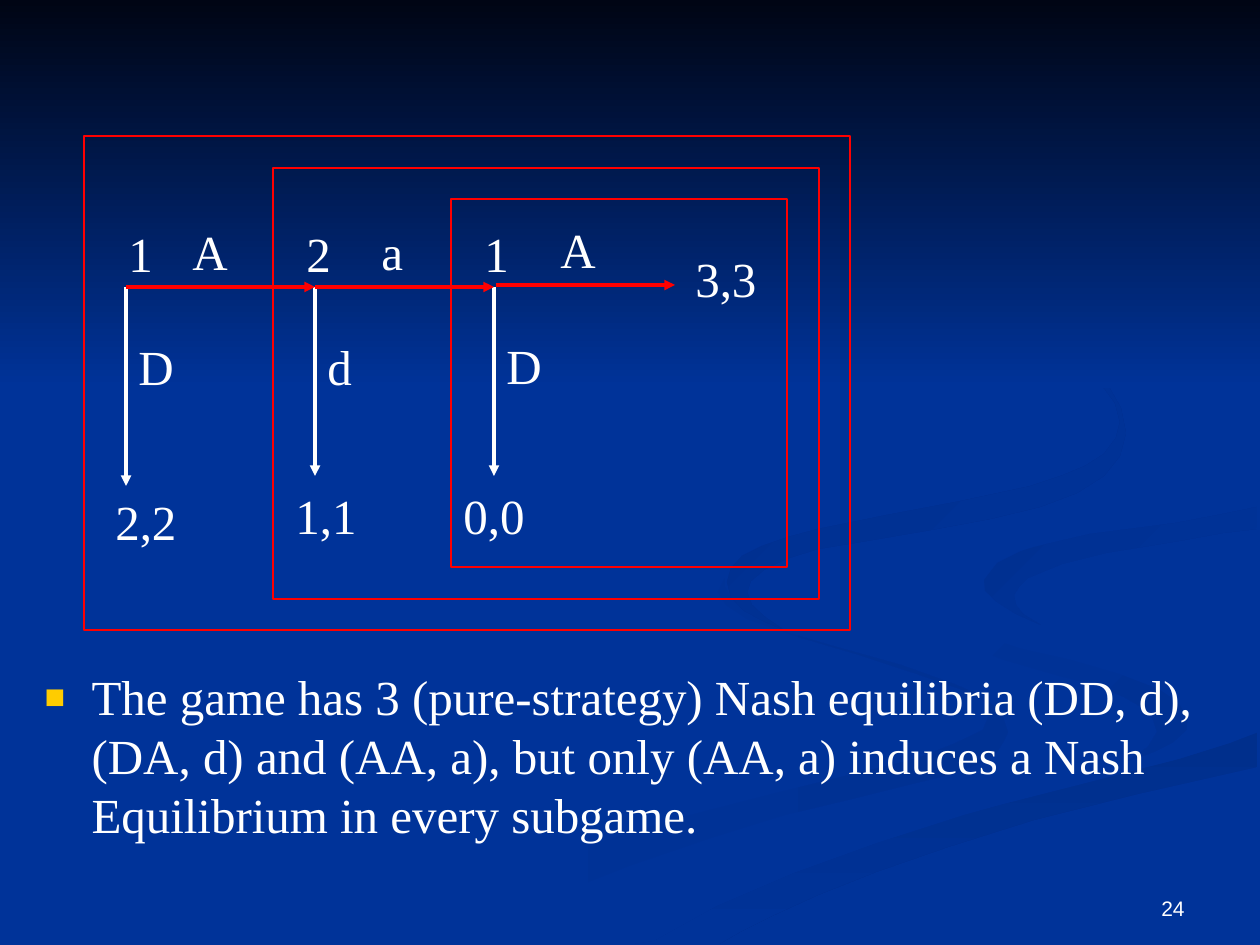
import dataclasses

import lxml.etree
import pptx
import pptx.dml.color
import pptx.enum.shapes
import pptx.enum.text
import pptx.oxml.ns
import pptx.util

UNIT = 914400 / 126  # EMU in one px


def px(num):
    return pptx.util.Emu(round(num * UNIT))


def rgb(code):
    return pptx.dml.color.RGBColor.from_string(code)


def put(target, values):
    for name, value in values.items():
        setattr(target, name, value)


def add(parent, tag, **attrs):
    return lxml.etree.SubElement(parent, pptx.oxml.ns.qn(tag), attrs)


@dataclasses.dataclass(frozen=True)
class Theme:
    back: str = "003399"
    night: str = "000514"
    text: str = "FFFFFF"
    path_red: str = "FF0000"
    mark: str = "FFCC00"
    serif: str = "Times New Roman"
    sans: str = "Arial"
    main: int = 28
    small: int = 12


class Deck:
    def __init__(self, theme):
        self.theme = theme
        self.show = pptx.Presentation()
        put(self.show, {"slide_width": px(1260), "slide_height": px(945)})
        self.slide = self.show.slides.add_slide(self.show.slide_layouts[1])
        self.shapes = self.slide.shapes
        title = self.shapes.title._element
        title.getparent().remove(title)
        fill = self.slide.background.fill
        fill.solid()
        fill.fore_color.rgb = rgb(theme.back)

    def place(self, shape, left, top, width, height):
        put(shape, {"left": px(left), "top": px(top),
                    "width": px(width), "height": px(height)})

    def style(self, para, face, size):
        put(para.font, {"name": face, "size": pptx.util.Pt(size)})
        para.font.color.rgb = rgb(self.theme.text)

    def band(self, points, first, last, angle):
        """Draw a filled outline; angle runs clockwise."""
        form = self.shapes.build_freeform(*points[0], scale=UNIT)
        form.add_line_segments(points[1:], close=True)
        shape = form.convert_to_shape()
        shape.shadow.inherit = False
        shape.line.fill.background()
        if first == last:
            shape.fill.solid()
            shape.fill.fore_color.rgb = rgb(first)
            return
        shape.fill.gradient()
        shape.fill.gradient_angle = (360 - angle) % 360
        for stop, color in zip(shape.fill.gradient_stops, (first, last)):
            stop.color.rgb = rgb(color)

    def body(self, text, box, drop):
        shape = self.slide.placeholders[1]
        self.shapes._spTree.append(shape._element)  # bring to front
        self.place(shape, *box)
        frame = shape.text_frame
        put(frame, {"text": text, "margin_top": px(drop), "word_wrap": True,
                    "auto_size": pptx.enum.text.MSO_AUTO_SIZE.NONE})
        para = frame.paragraphs[0]
        para.space_before = pptx.util.Pt(0)
        props = para._p.get_or_add_pPr()
        props.set("marL", str(px(47)))
        props.set("indent", str(px(-47)))
        add(add(props, "a:buClr"), "a:srgbClr", val=self.theme.mark)
        add(props, "a:buSzPct", val="70000")
        add(props, "a:buFont", typeface=self.theme.sans)
        add(props, "a:buChar", char="■")
        self.style(para, self.theme.serif, self.theme.main)

    def label(self, text, left, top, width):
        shape = self.shapes.add_textbox(*map(px, (left, top, width, 72)))
        put(shape.text_frame, {
            "text": text, "word_wrap": False,
            "auto_size": pptx.enum.text.MSO_AUTO_SIZE.SHAPE_TO_FIT_TEXT})
        self.style(shape.text_frame.paragraphs[0],
                   self.theme.serif, self.theme.main)

    def number(self, text, box):
        frame = self.shapes.add_textbox(*map(px, box)).text_frame
        put(frame, {"text": text, "word_wrap": True,
                    "vertical_anchor": pptx.enum.text.MSO_ANCHOR.BOTTOM})
        para = frame.paragraphs[0]
        para.alignment = pptx.enum.text.PP_ALIGN.RIGHT
        self.style(para, self.theme.sans, self.theme.small)

    def arrow(self, ends, color):
        kind = pptx.enum.shapes.MSO_CONNECTOR.STRAIGHT
        line = self.shapes.add_connector(kind, *map(px, ends))
        line.line.width = pptx.util.Pt(2)
        line.line.color.rgb = rgb(color)
        add(line.line._get_or_add_ln(), "a:tailEnd", type="triangle")
        add(line._element.spPr, "a:effectLst")

    def frame(self, box):
        kind = pptx.enum.shapes.MSO_SHAPE.RECTANGLE
        shape = self.shapes.add_shape(kind, *map(px, box))
        shape.shadow.inherit = False
        shape.fill.background()
        shape.line.width = pptx.util.Pt(0.75)
        shape.line.color.rgb = rgb(self.theme.path_red)


# Backdrop outlines, from back to front
STREAM = [
    (984, 697), (954, 684), (901, 665), (833, 646), (789, 633), (759, 617), (740, 606),
    (730, 596), (725, 587), (725, 578), (718, 592), (726, 605), (747, 619), (795, 636),
    (856, 654), (917, 674), (960, 689), (984, 701), (990, 713), (983, 730), (956, 743),
    (916, 759), (862, 772), (776, 793), (679, 818), (577, 849), (474, 891), (378, 944),
    (455, 944), (543, 900), (629, 866), (711, 838), (785, 815), (852, 799), (908, 785),
    (953, 774), (983, 762), (997, 752), (1004, 741), (1008, 732), (1002, 714)]
BEND = [
    (1188, 718), (1178, 702), (1158, 689), (1119, 674), (1071, 660), (1022, 649),
    (975, 634), (939, 617), (920, 604), (912, 585), (916, 604), (931, 622), (965, 645),
    (1004, 660), (1056, 675), (1094, 685), (1124, 697), (1143, 708), (1153, 719),
    (1157, 732), (1148, 747), (1126, 762), (1154, 752), (1174, 742), (1186, 732)]
SHORE = [
    (654, 941), (634, 944), (719, 944), (740, 932), (774, 915), (818, 895), (876, 872),
    (948, 847), (1034, 820), (1138, 794), (1257, 767), (1257, 732), (1230, 743),
    (1179, 759), (1092, 781), (1004, 804), (963, 815), (877, 843), (794, 873), (717, 906)]
RIVER = [
    (913, 585), (921, 604), (939, 617), (975, 634), (1023, 649), (1072, 660), (1120, 674),
    (1159, 689), (1178, 702), (1188, 718), (1187, 730), (1173, 743), (1148, 756),
    (1110, 766), (1062, 779), (983, 799), (887, 825), (780, 862), (663, 912), (601, 944),
    (634, 944), (654, 941), (717, 906), (794, 873), (877, 843), (964, 815), (1004, 804),
    (1094, 781), (1179, 759), (1230, 743), (1259, 732), (1259, 678), (1208, 669),
    (1163, 659), (1091, 641), (1048, 627), (1013, 611), (990, 596), (984, 583),
    (990, 571), (1008, 557), (1036, 547), (1090, 534), (1176, 523), (1240, 512),
    (1259, 507), (1259, 488), (1212, 498), (1159, 505), (1072, 518), (1018, 525),
    (970, 538), (935, 553), (920, 566)]
CURL = [
    (984, 580), (985, 591), (997, 602), (1016, 614), (1041, 625), (1023, 614), (1016, 605),
    (1014, 595), (1019, 587), (1028, 578), (1062, 564), (1106, 553), (1179, 541),
    (1223, 533), (1257, 529), (1257, 507), (1218, 515), (1176, 523), (1090, 534),
    (1034, 547), (1021, 551), (997, 563)]
HOOK = [
    (861, 542), (931, 530), (990, 519), (1040, 507), (1077, 493), (1104, 476), (1120, 456),
    (1126, 433), (1121, 408), (1109, 387), (1089, 367), (1062, 346), (1021, 323),
    (983, 304), (960, 294), (1014, 320), (1066, 352), (1096, 377), (1115, 403),
    (1120, 422), (1116, 438), (1104, 454), (1085, 466), (1061, 476), (1031, 486),
    (961, 501), (887, 515), (818, 529), (788, 537), (762, 546), (742, 556), (731, 568),
    (727, 582), (731, 597), (743, 610), (761, 620), (784, 630), (765, 617), (752, 605),
    (747, 592), (751, 581), (764, 570), (786, 559), (818, 549)]
SKY = [(0, 0), (0, 388), (1260, 388), (1260, 0)]

# Game tree labels: text, left, top, width
LABELS = [
    ("1", 472, 217, 50), ("1", 116, 217, 50), ("2", 294, 217, 50),
    ("1,1", 283, 479, 87), ("2,2", 103, 485, 87), ("0,0", 451, 479, 87),
    ("3,3", 683, 242, 87), ("D", 126, 330, 60), ("D", 494, 329, 60),
    ("d", 315, 330, 50), ("A", 180, 215, 60), ("A", 548, 213, 60),
    ("a", 369, 215, 47)]


def main():
    theme = Theme()
    deck = Deck(theme)

    # Backdrop
    for points, first, last, angle in [
            (STREAM, theme.back, "003193", 0), (BEND, theme.back, "003193", 45),
            (SHORE, "002F8C", theme.back, 90), (RIVER, theme.back, theme.back, 0),
            (CURL, "003091", theme.back, 45), (HOOK, "002F8E", theme.back, 45),
            (SKY, theme.night, theme.back, 90)]:
        deck.band(points, first, last, angle)

    # Finding below the tree
    deck.body("The game has 3 (pure-strategy) Nash equilibria (DD, d), (DA, d) and "
              "(AA, a), but only (AA, a) induces a Nash Equilibrium in every subgame.",
              (32, 53, 1197, 860), 614)

    # Moves: down in white, across in red
    for left, foot in [(126, 486), (315, 476), (494, 476)]:
        deck.arrow((left, 287, left, foot), theme.text)
    for left, right, top in [(126, 315, 287), (315, 494, 287), (496, 675, 285)]:
        deck.arrow((left, top, right, top), theme.path_red)
    for item in LABELS:
        deck.label(*item)

    # Subgames, from inner to outer
    for box in [(451, 199, 336, 368), (273, 168, 546, 431), (84, 136, 766, 494)]:
        deck.frame(box)

    deck.number("24", (903, 861, 294, 66))
    deck.show.save("out.pptx")


if __name__ == "__main__":
    main()
